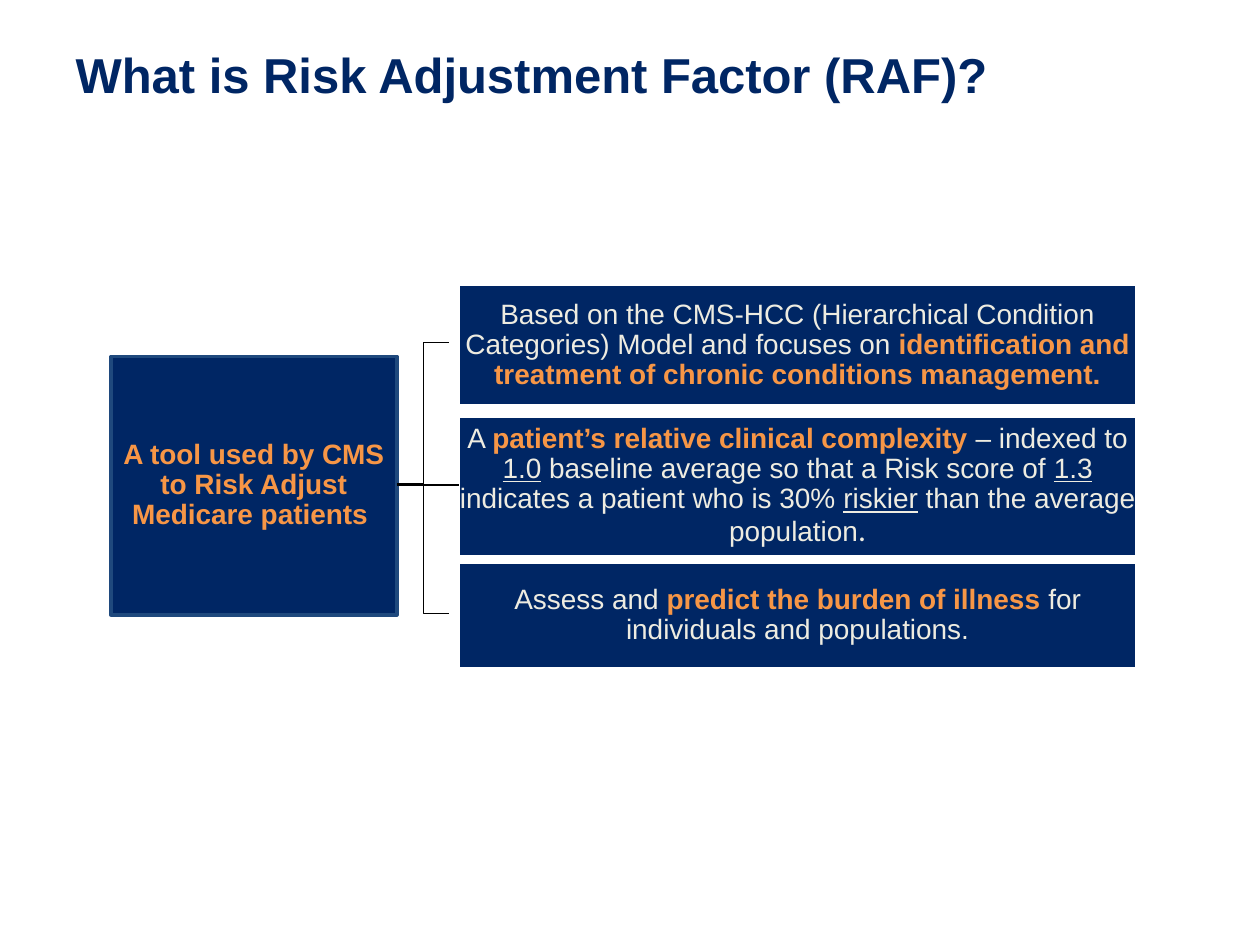
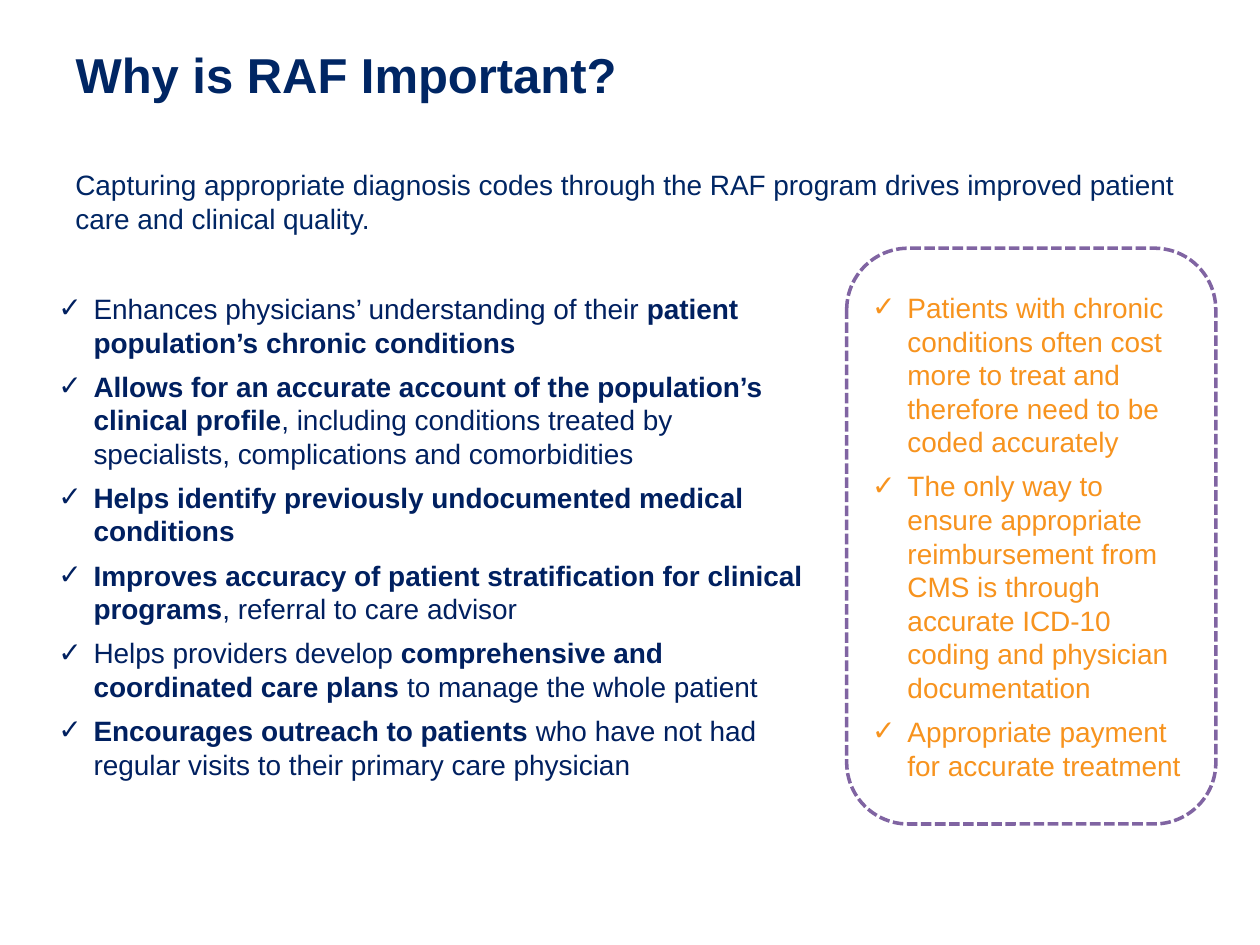
from lxml import etree
from pptx import Presentation
from pptx.dml.color import RGBColor
from pptx.enum.dml import MSO_LINE
from pptx.enum.shapes import MSO_CONNECTOR, MSO_SHAPE
from pptx.enum.text import MSO_ANCHOR, MSO_AUTO_SIZE, PP_ALIGN
from pptx.oxml.ns import qn
from pptx.util import Inches, Pt

NAVY, DEEP_NAVY, ORANGE, AMBER = "002664", "002060", "F79646", "F7931E"
CREAM, WHITE, BLACK, BLUE, PURPLE = "EEECE1", "FFFFFF", "000000", "1F497D", "8064A2"
STRONG = {"color": ORANGE, "bold": True}
BOLD = {"bold": True}
UNDERLINED = {"underline": True}


def rgb(value):
    return RGBColor.from_string(value)


class Deck:
    font = "Arial"
    body_size = 16
    title_size = 28

    def __init__(self):
        self.presentation = Presentation()
        self.presentation.slide_width = Inches(10)
        self.presentation.slide_height = Inches(7.5)
        self.slide = None

    def add_slide(self, heading):
        self.slide = self.presentation.slides.add_slide(self.presentation.slide_layouts[5])
        title = self.slide.shapes.title
        title.left, title.top = Inches(0.5), Inches(0.3)
        title.width, title.height = Inches(9), Inches(1.25)
        frame = self.prepare(title, (0.1, 0.05), MSO_ANCHOR.TOP)
        self.add_runs(frame.paragraphs[0], [(heading, BOLD)], NAVY, self.title_size)

    def prepare(self, shape, insets, anchor=MSO_ANCHOR.MIDDLE):
        frame = shape.text_frame
        frame.word_wrap = True
        frame.auto_size = MSO_AUTO_SIZE.NONE
        frame.vertical_anchor = anchor
        frame.margin_left = frame.margin_right = Inches(insets[0])
        frame.margin_top = frame.margin_bottom = Inches(insets[1])
        return frame

    def add_runs(self, paragraph, runs, color, size=body_size, align=PP_ALIGN.LEFT):
        paragraph.alignment = align
        for text, style in runs:
            run = paragraph.add_run()
            run.text = text
            font = run.font
            font.name = style.get("font", self.font)
            font.size = Pt(style.get("size", size))
            font.bold = style.get("bold", False)
            font.underline = style.get("underline", False)
            font.color.rgb = rgb(style.get("color", color))

    def shape(self, kind, box, fill=None, line=None, dash=None):
        shape = self.slide.shapes.add_shape(kind, *map(Inches, box))
        shape.shadow.inherit = False
        if fill:
            shape.fill.solid()
            shape.fill.fore_color.rgb = rgb(fill)
        else:
            shape.fill.background()
        if line:
            shape.line.color.rgb = rgb(line)
            shape.line.width = Pt(2)
            if dash:
                shape.line.dash_style = dash
        else:
            shape.line.fill.background()
        return shape

    def block(self, box, runs, line):
        frame = self.prepare(self.shape(MSO_SHAPE.RECTANGLE, box, NAVY, line), (0.01, 0.01))
        paragraph = frame.paragraphs[0]
        paragraph.line_spacing = 0.9
        self.add_runs(paragraph, runs, CREAM, align=PP_ALIGN.CENTER)

    def statement(self, box, text):
        shape = self.slide.shapes.add_textbox(*map(Inches, box))
        frame = self.prepare(shape, (0.1, 0.05))
        self.add_runs(frame.paragraphs[0], [(text, {})], NAVY)

    def checklist(self, box, items, color, fill=None, line=None):
        panel = self.shape(MSO_SHAPE.ROUNDED_RECTANGLE, box, fill, line, MSO_LINE.SQUARE_DOT)
        frame = self.prepare(panel, (0.06, 0.03))
        for index, runs in enumerate(items):
            paragraph = frame.add_paragraph() if index else frame.paragraphs[0]
            if index:
                paragraph.space_before = Pt(3)
            paragraph.space_after = Pt(3)
            properties = paragraph._p.get_or_add_pPr()
            properties.set("marL", str(Inches(0.28)))
            properties.set("indent", str(-Inches(0.28)))
            etree.SubElement(properties, qn("a:buFont")).set("typeface", self.font)
            etree.SubElement(properties, qn("a:buChar")).set("char", "✓")
            self.add_runs(paragraph, runs, color)

    def bracket(self, points):
        start, *others = [(Inches(x), Inches(y)) for x, y in points]
        builder = self.slide.shapes.build_freeform(*start)
        builder.add_line_segments(others, close=False)
        arm = builder.convert_to_shape()
        arm.shadow.inherit = False
        arm.fill.background()
        arm.line.color.rgb = rgb(BLACK)
        arm.line.width = Pt(0.75)

    def rule(self, left, right, y):
        rule = self.slide.shapes.add_connector(
            MSO_CONNECTOR.STRAIGHT, Inches(left), Inches(y), Inches(right), Inches(y))
        rule.line.color.rgb = rgb(BLACK)
        rule.line.width = Pt(0.75)
        etree.SubElement(rule._element.spPr, qn("a:effectLst"))


def definition_slide(deck):
    deck.add_slide("What is Risk Adjustment Factor (RAF)?")
    deck.block((0.88, 2.83, 2.27, 2.05),
               [("A tool used by CMS to Risk Adjust Medicare patients ", STRONG)], BLUE)
    aspects = [
        (2.26, 0.96, [
            ("Based on the CMS-HCC (Hierarchical Condition Categories) Model and focuses on ", {}),
            ("identification and treatment of chronic conditions management.", STRONG)]),
        (3.3, 1.12, [
            ("A ", {}),
            ("patient’s relative clinical complexity ", STRONG),
            ("– indexed to ", {}),
            ("1.0", UNDERLINED),
            (" baseline average so that a Risk score of ", {}),
            ("1.3", UNDERLINED),
            (" indicates a patient who is 30% ", {}),
            ("riskier", UNDERLINED),
            (" than the average population", {}),
            (".", {"font": "Calibri", "size": 18})]),
        (4.46, 0.85, [
            ("Assess and ", {}),
            ("predict the burden of illness ", STRONG),
            ("for individuals and populations.", {})]),
    ]
    for top, height, runs in aspects:
        deck.block((3.64, top, 5.38, height), runs, WHITE)

    tool_edge, trunk, arm_end = 3.15, 3.36, 3.56
    for start, end in ((3.85, 2.72), (3.84, 4.87)):
        deck.bracket([(tool_edge, start), (trunk, start), (trunk, end), (arm_end, end)])
    deck.rule(trunk, 3.64, 3.85)


def importance_slide(deck):
    deck.add_slide("Why is RAF Important?")
    deck.statement((0.5, 1.33, 9, 0.54),
                   "Capturing appropriate diagnosis codes through the RAF program "
                   "drives improved patient care and clinical quality.")
    benefits = [
        [("Enhances physicians’ understanding of their ", {}),
         ("patient population’s chronic conditions", BOLD)],
        [("Allows for an accurate account of the population’s clinical profile", BOLD),
         (", including conditions treated by specialists, complications and comorbidities", {})],
        [("Helps identify previously undocumented medical conditions", BOLD)],
        [("Improves accuracy of patient stratification for clinical programs", BOLD),
         (", referral to care advisor", {})],
        [("Helps providers develop ", {}),
         ("comprehensive and coordinated care plans", BOLD),
         (" to manage the whole patient", {})],
        [("Encourages outreach to patients ", BOLD),
         ("who have not had regular visits to their primary care physician", {})],
    ]
    deck.checklist((0.17, 1.87, 6.55, 4.77), benefits, DEEP_NAVY)
    payment_reasons = [
        "Patients with chronic conditions often cost more to treat and therefore "
        "need to be coded accurately",
        "The only way to ensure appropriate reimbursement from CMS is through "
        "accurate ICD-10 coding and physician documentation",
        "Appropriate payment for accurate treatment",
    ]
    deck.checklist((6.72, 1.97, 2.93, 4.57), [[(reason, {})] for reason in payment_reasons],
                   AMBER, WHITE, PURPLE)


def main():
    deck = Deck()
    definition_slide(deck)
    importance_slide(deck)
    deck.presentation.save("out.pptx")


if __name__ == "__main__":
    main()
